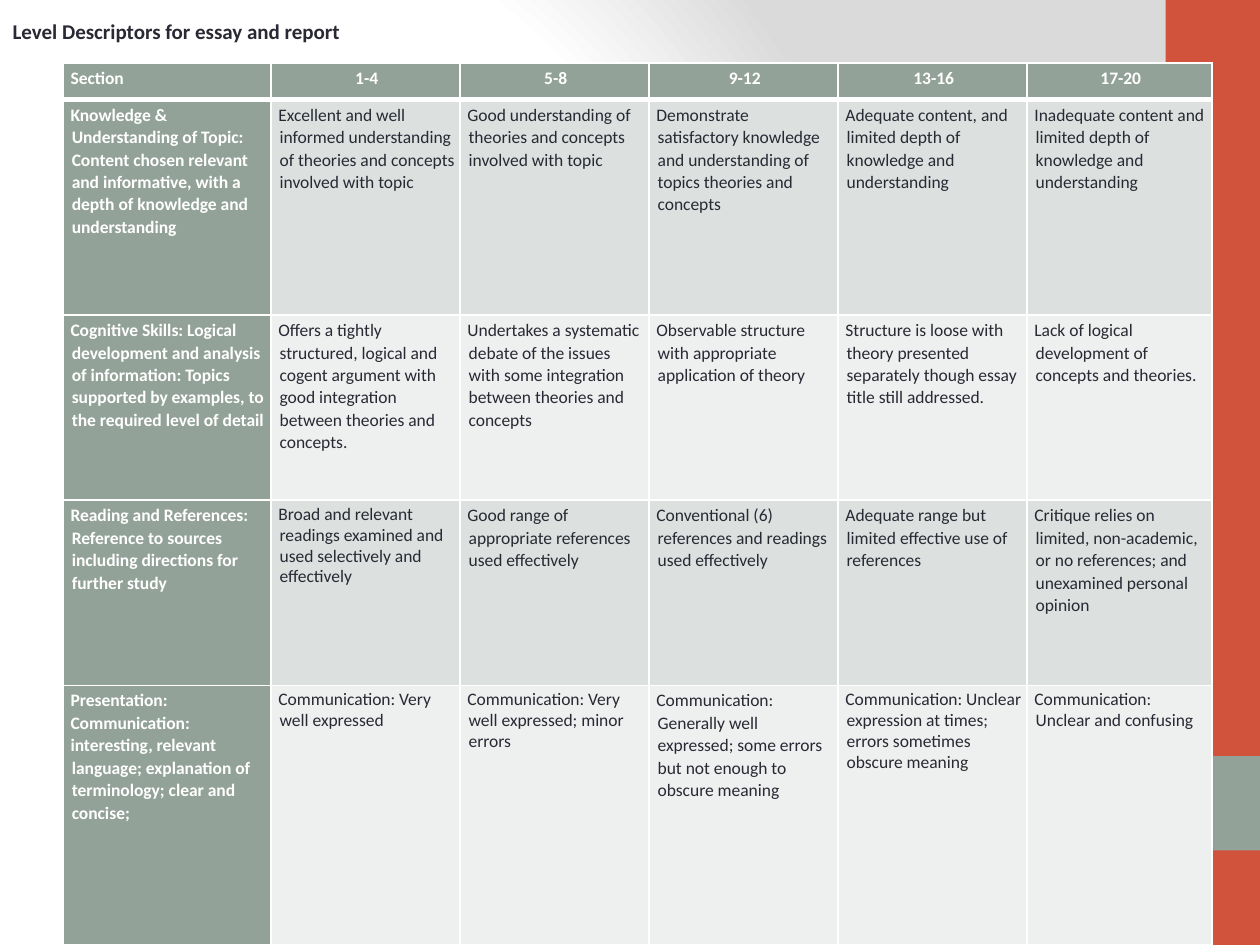
from dataclasses import dataclass

import pptx
import pptx.dml.color
import pptx.enum.shapes
import pptx.enum.text
import pptx.oxml
import pptx.oxml.ns
import pptx.util

Inches = pptx.util.Inches
Pt = pptx.util.Pt
PP_ALIGN = pptx.enum.text.PP_ALIGN
NS = pptx.oxml.ns.nsdecls("a")


@dataclass(frozen=True)
class Theme:
    font: str = "Calibri"
    title_size: float = 12
    cell_size: float = 10
    ink: str = "292934"
    white: str = "FFFFFF"
    sage: str = "93A299"
    red: str = "D2533C"
    grey: str = "DADADA"
    bands: tuple[str, str] = ("DCE0DE", "EEF0EF")
    spacing: float = 1.06
    tight_spacing: float = 0.98
    rule: float = 1
    header_rule: float = 3


@dataclass(frozen=True)
class Criterion:
    name: str
    height: float
    descriptors: tuple[str, ...]
    tight: tuple[int, ...] = ()  # columns with closer line spacing


@dataclass(frozen=True)
class Bar:
    top: float
    height: float
    color: str


THEME = Theme()
BARS = (Bar(0, 7.5, THEME.red), Bar(6, 0.75, THEME.sage))
HEADER = ("Section", "1-4", "5-8", "9-12", "13-16", "17-20")
HEADER_HEIGHT = 0.29
COLUMN_WIDTHS = (1.65, 1.5, 1.5, 1.5, 1.5, 1.47)
CRITERIA = (
    Criterion(
        "Knowledge & Understanding of Topic: Content chosen relevant and informative, "
        "with a depth of knowledge and understanding",
        1.71,
        ("Excellent and well informed understanding of theories and concepts involved with topic",
         "Good understanding of theories and concepts involved with topic",
         "Demonstrate satisfactory knowledge and understanding of topics theories and concepts",
         "Adequate content, and limited depth of knowledge and understanding",
         "Inadequate content and limited depth of knowledge and understanding")),
    Criterion(
        "Cognitive Skills: Logical development and analysis of information: "
        "Topics supported by examples, to the required level of detail",
        1.47,
        ("Offers a tightly structured, logical and cogent argument with good integration "
         "between theories and concepts.",
         "Undertakes a systematic debate of the issues with some integration "
         "between theories and concepts",
         "Observable structure with appropriate application of theory",
         "Structure is loose with theory presented separately though essay title still addressed.",
         "Lack of logical development of concepts and theories.")),
    Criterion(
        "Reading and References: Reference to sources including directions for further study",
        1.47,
        ("Broad and relevant readings examined and used selectively and effectively",
         "Good range of appropriate references used effectively",
         "Conventional (6) references and readings used effectively",
         "Adequate range but limited effective use of references",
         "Critique relies on limited, non-academic, or no references; "
         "and unexamined personal opinion"),
        tight=(1,)),
    Criterion(
        "Presentation:\nCommunication:\n"
        "interesting, relevant language; explanation of terminology; clear and concise;",
        2.06,
        ("Communication: Very well expressed",
         "Communication: Very well expressed; minor errors",
         "Communication: Generally well expressed; some errors but not enough to obscure meaning",
         "Communication: Unclear expression at times; errors sometimes obscure meaning",
         "Communication: Unclear and confusing"),
        tight=(1, 2, 4, 5)),
)


def rgb(color: str) -> pptx.dml.color.RGBColor:
    return pptx.dml.color.RGBColor.from_string(color)


def set_font(p, size: float, color: str, bold: bool) -> None:
    p.font.name = THEME.font
    p.font.size = Pt(size)
    p.font.bold = bold
    p.font.color.rgb = rgb(color)


def set_background(s) -> None:
    """Fill the slide with a circular gradient that stays white for three quarters."""
    s.background.fill.gradient()
    grad = s.element.find(".//" + pptx.oxml.ns.qn("a:gradFill"))
    stops = "".join(
        f'<a:gs pos="{pos * 1000}"><a:srgbClr val="{color}"/></a:gs>'
        for pos, color in ((0, THEME.white), (75, THEME.white), (100, THEME.grey)))
    grad.getparent().replace(grad, pptx.oxml.parse_xml(
        f'<a:gradFill {NS} rotWithShape="1"><a:gsLst>{stops}</a:gsLst><a:path path="circle">'
        '<a:fillToRect l="20000" t="50000" r="100000" b="50000"/></a:path></a:gradFill>'))


def add_bar(s, bar: Bar) -> None:
    sp = s.shapes.add_shape(pptx.enum.shapes.MSO_SHAPE.RECTANGLE, Inches(9.25),
                            Inches(bar.top), Inches(0.75), Inches(bar.height))
    sp.shadow.inherit = False
    sp.fill.solid()
    sp.fill.fore_color.rgb = rgb(bar.color)
    sp.line.fill.background()


def set_title(s, text: str) -> None:
    title = s.shapes.title
    title.left, title.top, title.width, title.height = 0, 0, Inches(10), Inches(0.5)
    tf = title.text_frame
    tf.text = text
    tf.vertical_anchor = pptx.enum.text.MSO_ANCHOR.MIDDLE
    p = tf.paragraphs[0]
    p.alignment = PP_ALIGN.LEFT
    set_font(p, THEME.title_size, THEME.ink, True)


def set_borders(cell, top: float, bottom: float) -> None:
    tc_pr = cell._tc.get_or_add_tcPr()
    sides = (("L", THEME.rule), ("R", THEME.rule), ("T", top), ("B", bottom))
    for i, (side, width) in enumerate(sides):
        tc_pr.insert(i, pptx.oxml.parse_xml(
            f'<a:ln{side} {NS} w="{Pt(width)}"><a:solidFill>'
            f'<a:srgbClr val="{THEME.white}"/></a:solidFill></a:ln{side}>'))


def fill_cell(cell, text: str, fill: str, heading: bool,
              spacing: float = THEME.spacing, align=PP_ALIGN.LEFT) -> None:
    cell.text = text
    cell.margin_left, cell.margin_right = Inches(0.06), Inches(0.04)
    cell.margin_top, cell.margin_bottom = Inches(0.03), 0
    cell.fill.solid()
    cell.fill.fore_color.rgb = rgb(fill)
    for p in cell.text_frame.paragraphs:
        p.alignment = align
        p.line_spacing = spacing
        p_pr = p._p.get_or_add_pPr()
        p_pr.set("marL", str(Inches(0.01)))
        p_pr.set("indent", str(-Inches(0.01)))
        set_font(p, THEME.cell_size, THEME.white if heading else THEME.ink, heading)


def add_rubric(s) -> None:
    heights = (HEADER_HEIGHT, *(c.height for c in CRITERIA))
    table = s.shapes.add_table(len(heights), len(HEADER), Inches(0.5), Inches(0.5),
                               Inches(sum(COLUMN_WIDTHS)), Inches(sum(heights))).table
    table.horz_banding = False
    for column, width in zip(table.columns, COLUMN_WIDTHS):
        column.width = Inches(width)
    for row, height in zip(table.rows, heights):
        row.height = Inches(height)

    for col, text in enumerate(HEADER):
        cell = table.cell(0, col)
        fill_cell(cell, text, THEME.sage, True,
                  align=PP_ALIGN.CENTER if col else PP_ALIGN.LEFT)
        set_borders(cell, THEME.rule, THEME.header_rule)
    for row, criterion in enumerate(CRITERIA, 1):
        band = THEME.bands[(row - 1) % 2]
        for col, text in enumerate((criterion.name, *criterion.descriptors)):
            cell = table.cell(row, col)
            fill_cell(cell, text, band if col else THEME.sage, col == 0,
                      THEME.tight_spacing if col in criterion.tight else THEME.spacing)
            set_borders(cell, THEME.header_rule if row == 1 else THEME.rule, THEME.rule)


def main() -> None:
    prs = pptx.Presentation()
    prs.slide_width, prs.slide_height = Inches(10), Inches(7.5)
    s = prs.slides.add_slide(prs.slide_layouts[5])
    set_background(s)
    for bar in BARS:
        add_bar(s, bar)
    set_title(s, "Level Descriptors for essay and report")
    add_rubric(s)
    prs.save("out.pptx")


if __name__ == "__main__":
    main()
